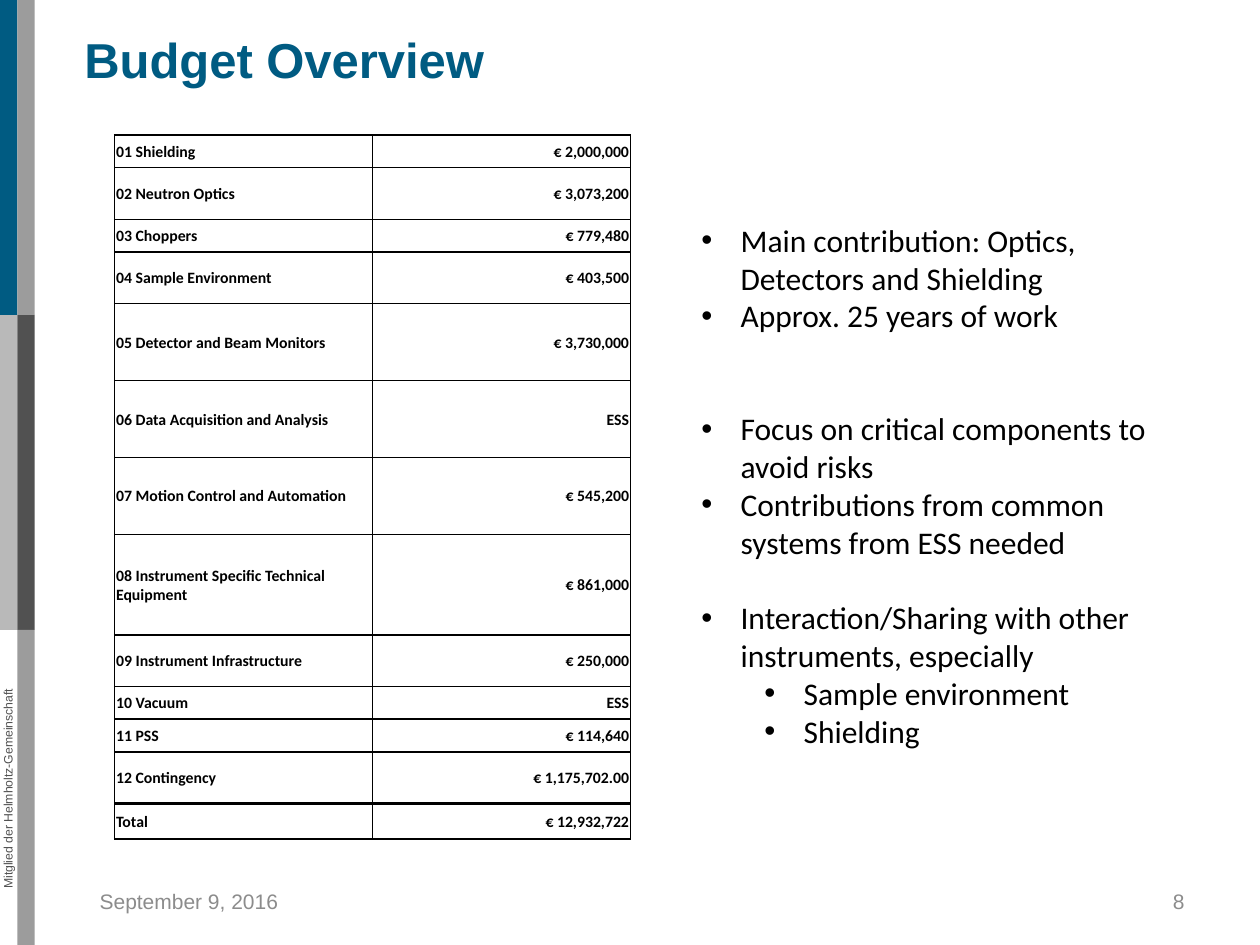
from lxml.etree import SubElement
from pptx import Presentation
from pptx.dml.color import RGBColor
from pptx.enum.shapes import MSO_SHAPE
from pptx.enum.text import MSO_ANCHOR as ANCHOR, MSO_AUTO_SIZE as AUTO, PP_ALIGN as ALIGN
from pptx.oxml.ns import qn
from pptx.util import Cm, Pt

BLUE = RGBColor(0x00, 0x5B, 0x82)
LIGHT = RGBColor(0xB9, 0xB9, 0xB9)
MID = RGBColor(0x9C, 0x9C, 0x9C)
DARK = RGBColor(0x51, 0x51, 0x51)
FOOTER = RGBColor(0x8C, 0x8C, 0x8C)
BLACK = RGBColor(0, 0, 0)

ROW_1, ROW_2, ROW_3, ROW_4, ROW_TOTAL = 0.66, 1.04, 1.55, 2.03, 0.71
BUDGET = [
    ("01 Shielding", "€ 2,000,000", ROW_1),
    ("02 Neutron Optics", "€ 3,073,200", ROW_2),
    ("03 Choppers", "€ 779,480", ROW_1),
    ("04 Sample Environment", "€ 403,500", ROW_2),
    ("05 Detector and Beam Monitors", "€ 3,730,000", ROW_3),
    ("06 Data Acquisition and Analysis", "ESS", ROW_3),
    ("07 Motion Control and Automation", "€ 545,200", ROW_3),
    ("08 Instrument Specific Technical Equipment", "€ 861,000", ROW_4),
    ("09 Instrument Infrastructure", "€ 250,000", ROW_2),
    ("10 Vacuum", "ESS", ROW_1),
    ("11 PSS", "€ 114,640", ROW_1),
    ("12 Contingency", "€ 1,175,702.00", ROW_2),
    ("Total", "€ 12,932,722", ROW_TOTAL),
]
POINTS = [
    ("Main contribution: Optics, Detectors and Shielding", 0, 0),
    ("Approx. 25 years of work", 0, 0),
    ("Focus on critical components to avoid risks", 0, 43),
    ("Contributions from common systems from ESS needed", 0, 0),
    ("Interaction/Sharing with other instruments, especially", 0, 21.5),
    ("Sample environment", 1, 0),
    ("Shielding", 1, 0),
]


class Deck:
    heading_font = "Arial"
    body_font = "Calibri"

    def __init__(self):
        self.prs = Presentation()
        self.prs.slide_width, self.prs.slide_height = Cm(25.4), Cm(19.05)
        self.s = self.prs.slides.add_slide(self.prs.slide_layouts[1])

    def style(self, p, font, size, color, bold=False, align=ALIGN.LEFT):
        p.alignment = align
        for r in p.runs:
            r.font.name, r.font.size, r.font.bold = font, Pt(size), bold
            r.font.color.rgb = color

    def place(self, sp, left, top, width, height):
        sp.left, sp.top, sp.width, sp.height = map(Cm, (left, top, width, height))

    def frame(self, tf, anchor=ANCHOR.TOP, left=0.25, top=0.13, right=0.25, bottom=0.13):
        tf.word_wrap, tf.auto_size, tf.vertical_anchor = True, AUTO.NONE, anchor
        tf.margin_left, tf.margin_top = Cm(left), Cm(top)
        tf.margin_right, tf.margin_bottom = Cm(right), Cm(bottom)

    def bar(self, column, row, color):
        width, height = 0.35, 6.35
        sp = self.s.shapes.add_shape(MSO_SHAPE.RECTANGLE, Cm(column * width),
                                     Cm(row * height), Cm(width), Cm(height))
        sp.shadow.inherit = False
        sp.fill.solid()
        sp.fill.fore_color.rgb = color
        sp.line.fill.background()

    def label(self, text, box, size, color, align=ALIGN.LEFT, rotation=0, **frame):
        sp = self.s.shapes.add_textbox(*map(Cm, box))
        sp.rotation = rotation
        tf = sp.text_frame
        self.frame(tf, **frame)
        tf.text = text
        self.style(tf.paragraphs[0], self.heading_font, size, color, align=align)

    def title(self, text, box):
        sp = self.s.shapes.title
        self.place(sp, *box)
        tf = sp.text_frame
        self.frame(tf, left=0, top=0, right=0, bottom=0)
        tf.text = text
        self.style(tf.paragraphs[0], self.heading_font, 28, BLUE, bold=True)

    def bullets(self, points, box):
        sp = self.s.placeholders[1]
        self.place(sp, *box)
        tf = sp.text_frame
        self.frame(tf)
        for i, (text, level, before) in enumerate(points):
            p = tf.paragraphs[0] if i == 0 else tf.add_paragraph()
            p.text, p.level = text, level
            p.space_before = Pt(before)
            pPr = p._p.get_or_add_pPr()
            pPr.set("marL", str(Cm(0.79 + 1.27 * level)))
            pPr.set("indent", str(Cm(-0.79)))
            SubElement(pPr, qn("a:buFont"), typeface="Arial")
            SubElement(pPr, qn("a:buChar"), char="•")
            self.style(p, self.body_font, 18, BLACK)

    def border(self, cell, side, width):
        ln = SubElement(cell._tc.get_or_add_tcPr(), qn("a:ln" + side), w=str(Pt(width)))
        fill = SubElement(ln, qn("a:solidFill"))
        SubElement(fill, qn("a:srgbClr"), val=str(BLACK))

    def table(self, rows, left, top, width):
        height = sum(row[-1] for row in rows)
        table = self.s.shapes.add_table(len(rows), 2, Cm(left), Cm(top),
                                        Cm(width), Cm(height)).table
        table.first_row = table.horz_banding = False
        total = len(rows) - 1
        for i, (*texts, row_height) in enumerate(rows):
            table.rows[i].height = Cm(row_height)
            for j, text in enumerate(texts):
                cell = table.cell(i, j)
                cell.text = text
                cell.vertical_anchor = ANCHOR.MIDDLE
                cell.margin_left = cell.margin_right = cell.margin_top = Cm(0.03)
                cell.margin_bottom = 0
                self.style(cell.text_frame.paragraphs[0], self.body_font, 9, BLACK,
                           bold=True, align=ALIGN.RIGHT if j else ALIGN.LEFT)
                widths = {"L": 1, "R": 1, "T": 2 if i == total else 1,
                          "B": 2 if i == total - 1 else 1}
                for side, line_width in widths.items():
                    self.border(cell, side, line_width)
                cell.fill.background()


def main():
    d = Deck()
    for bar in [(0, 1, LIGHT), (1, 1, DARK), (0, 0, BLUE), (1, 0, MID), (1, 2, MID)]:
        d.bar(*bar)
    d.label("Mitglied der Helmholtz-Gemeinschaft", (-3, 15.75, 6.32, 0.3), 7, DARK,
            ALIGN.CENTER, 270, left=0, top=0, right=0, bottom=0)
    d.label("September 9, 2016", (2.01, 17.65, 5.92, 1.02), 12, FOOTER,
            anchor=ANCHOR.MIDDLE, left=0)
    d.label("8", (18.21, 17.65, 5.92, 1.02), 12, FOOTER, ALIGN.RIGHT, anchor=ANCHOR.MIDDLE)
    d.title("Budget Overview", (1.7, 0.6, 22.71, 1.6))
    d.table(BUDGET, 2.31, 2.72, 10.4)
    d.bullets(POINTS, (13.89, 4.32, 10.39, 11.02))
    d.prs.save("out.pptx")


if __name__ == "__main__":
    main()
